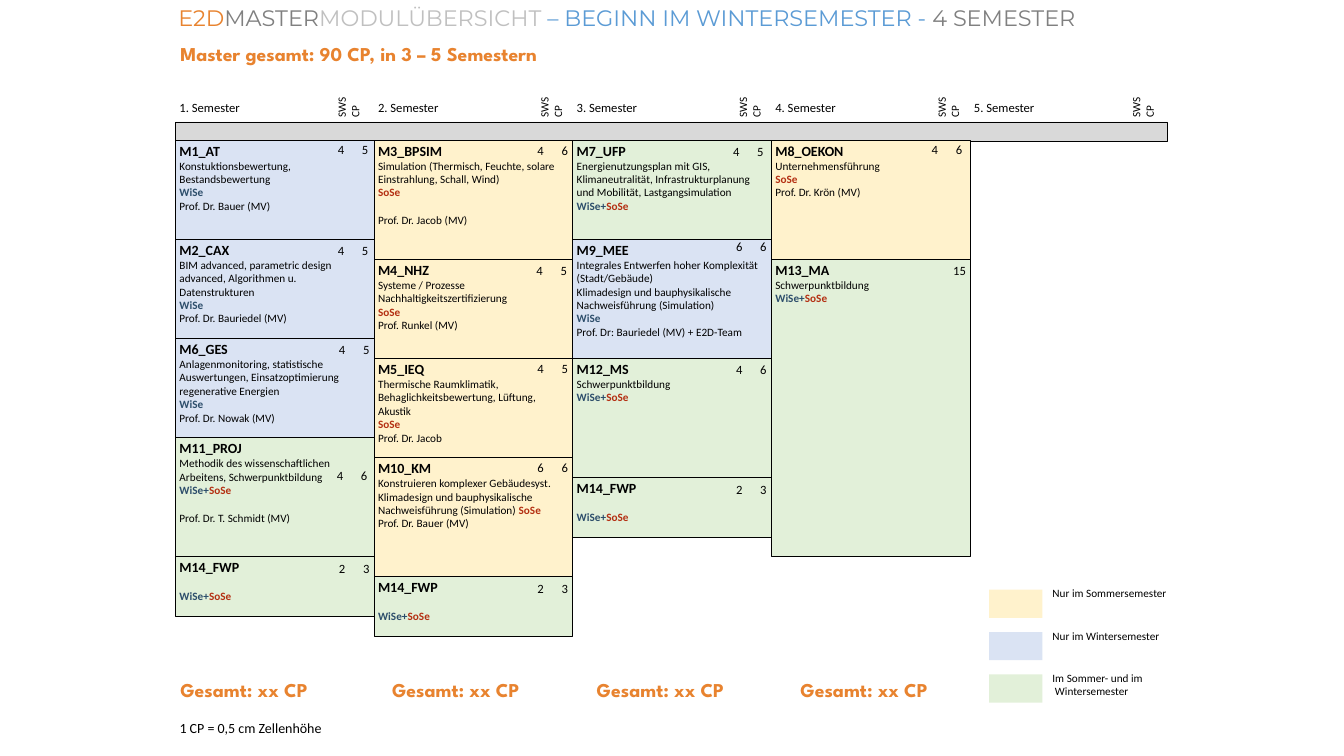
from dataclasses import dataclass

from lxml import etree
from pptx import Presentation
from pptx.dml.color import RGBColor
from pptx.enum.shapes import MSO_SHAPE
from pptx.enum.text import MSO_ANCHOR, MSO_AUTO_SIZE, PP_ALIGN
from pptx.oxml.ns import qn
from pptx.util import Inches, Pt

RECTANGLE = MSO_SHAPE.RECTANGLE
TOP = MSO_ANCHOR.TOP
LEFT, RIGHT = PP_ALIGN.LEFT, PP_ALIGN.RIGHT
NO_AUTOFIT = MSO_AUTO_SIZE.NONE


@dataclass(frozen=True)
class Theme:
    black: str = "000000"
    orange: str = "E8832F"
    grey: str = "808080"
    silver: str = "C0C0C0"
    sky: str = "5B9BD5"
    bar: str = "D9D9D9"
    winter: str = "2D4E6B"
    summer: str = "B43013"
    body_font: str = "Calibri"
    title_font: str = "Montserrat"
    total_font: str = "League Spartan"
    title: int = 16
    total: int = 14
    code: int = 10
    header: int = 9
    small: int = 8


@dataclass(frozen=True)
class Module:
    code: str
    sws: str
    cp: int
    season: str
    body: str = ""
    teacher: str = ""
    teacher_gap: int = 0
    credit_shift: tuple = (0, 0.01)


THEME = Theme()
SEASON_FILLS = {"summer": "FFF2CC", "winter": "DAE3F3", "both": "E2F0D9"}
SEASON_RUNS = {
    "summer": [("SoSe", THEME.summer)],
    "winter": [("WiSe", THEME.winter)],
    "both": [("WiSe+", THEME.winter), ("SoSe", THEME.summer)],
}
ELECTIVE = Module("M14_FWP", "2", 3, "both", credit_shift=(0, 0.02))
SEMESTERS = [
    [
        Module("M1_AT", "4", 5, "winter", "Konstuktionsbewertung,\nBestandsbewertung",
               "Prof. Dr. Bauer (MV)", credit_shift=(-0.01, 0)),
        Module("M2_CAX", "4", 5, "winter",
               "BIM advanced, parametric design advanced, Algorithmen u. Datenstrukturen",
               "Prof. Dr. Bauriedel (MV)", credit_shift=(-0.01, 0.02)),
        Module("M6_GES", "4", 5, "winter",
               "Anlagenmonitoring, statistische Auswertungen, Einsatzoptimierung regenerative Energien",
               "Prof. Dr. Nowak (MV)"),
        Module("M11_PROJ", "4", 6, "both",
               "Methodik des wissenschaftlichen Arbeitens, Schwerpunktbildung",
               "Prof. Dr. T. Schmidt (MV)", 10, (-0.02, 0.28)),
        ELECTIVE,
    ],
    [
        Module("M3_BPSIM", "4", 6, "summer",
               "Simulation (Thermisch, Feuchte, solare Einstrahlung, Schall, Wind)",
               "Prof. Dr. Jacob (MV)", 10),
        Module("M4_NHZ", "4", 5, "summer",
               "Systeme / Prozesse\nNachhaltigkeitszertifizierung",
               "Prof. Runkel (MV)", credit_shift=(-0.01, 0.02)),
        Module("M5_IEQ", "4", 5, "summer",
               "Thermische Raumklimatik, Behaglichkeitsbewertung, Lüftung, Akustik",
               "Prof. Dr. Jacob", credit_shift=(0, 0)),
        Module("M10_KM", "6", 6, "summer",
               "Konstruieren komplexer Gebäudesyst.\nKlimadesign und bauphysikalische\n"
               "Nachweisführung (Simulation) ", "Prof. Dr. Bauer (MV)", credit_shift=(0, 0)),
        ELECTIVE,
    ],
    [
        Module("M7_UFP", "4", 5, "both",
               "Energienutzungsplan mit GIS,\nKlimaneutralität, Infrastrukturplanung "
               "und Mobilität, Lastgangsimulation", credit_shift=(-0.03, 0.02)),
        Module("M9_MEE", "6", 6, "winter",
               "Integrales Entwerfen hoher Komplexität (Stadt/Gebäude)\n"
               "Klimadesign und bauphysikalische Nachweisführung (Simulation)",
               "Prof. Dr: Bauriedel (MV) + E2D-Team", credit_shift=(0, -0.02)),
        Module("M12_MS", "4", 6, "both", "Schwerpunktbildung"),
        ELECTIVE,
    ],
    [
        Module("M8_OEKON", "4", 6, "summer", "Unternehmensführung",
               "Prof. Dr. Krön (MV)", credit_shift=(-0.03, 0)),
        Module("M13_MA", "", 15, "both", "Schwerpunktbildung", credit_shift=(0, 0.02)),
    ],
    [],
]
GRID_LEFT, GRID_TOP, COLUMN_WIDTH = 1.74, 1.39, 1.97
CP_HEIGHT = 0.5 / 2.54
CREDIT_WIDTH = 0.39
UNIT_LEFTS = [3.35, 5.36, 7.33, 9.3, 11.23]
TOTAL_LEFTS = [1.69, 3.79, 5.82, 7.84]


def add_run(paragraph, text, size, color=THEME.black, font=THEME.body_font, bold=False):
    run = paragraph.add_run()
    run.text = text
    run.font.size = Pt(size)
    run.font.name = font
    run.font.bold = bold
    run.font.color.rgb = RGBColor.from_string(color)


def add_box(left, top, width, height, inset=(0.04, 0.04), fill=None, outlined=False):
    """Add a text box, or a rectangle if a fill is given."""
    area = Inches(left), Inches(top), Inches(width), Inches(height)
    if fill:
        box = slide.shapes.add_shape(RECTANGLE, *area)
        box.shadow.inherit = False
        box.fill.solid()
        box.fill.fore_color.rgb = RGBColor.from_string(fill)
        if outlined:
            box.line.color.rgb = RGBColor.from_string(THEME.black)
            box.line.width = Pt(0.5)
        else:
            box.line.fill.background()
    else:
        box = slide.shapes.add_textbox(*area)
    frame = box.text_frame
    frame.word_wrap = True
    frame.vertical_anchor = TOP
    frame.margin_left = frame.margin_right = Inches(inset[0])
    frame.margin_top = frame.margin_bottom = Inches(inset[1])
    frame.paragraphs[0].alignment = LEFT
    return box


prs = Presentation()
prs.slide_width, prs.slide_height = Inches(13.33), Inches(7.5)
slide = prs.slides.add_slide(prs.slide_layouts[5])

title = slide.shapes.title
title.left, title.top, title.width, title.height = Inches(1.73), 0, Inches(10.02), Inches(0.59)
heading = title.text_frame
heading.auto_size = NO_AUTOFIT
heading.vertical_anchor = TOP
heading.margin_left = heading.margin_right = heading.margin_top = heading.margin_bottom = Inches(0.04)
heading.paragraphs[0].alignment = LEFT
for text, color in [("E2D", THEME.orange), ("MASTER", THEME.grey),
                    ("MODULÜBERSICHT ", THEME.silver),
                    ("– BEGINN IM WINTERSEMESTER - ", THEME.sky), ("4 SEMESTER", THEME.grey)]:
    add_run(heading.paragraphs[0], text, THEME.title, color, THEME.title_font)

sums = [("Master gesamt: 90 CP, in 3 – 5 Semestern", 1.69, 0.37, 4.28)]
sums += [("Gesamt: xx CP", left, 6.68, 1.97) for left in TOTAL_LEFTS]
for text, left, top, width in sums:
    total = add_box(left, top, width, 0.34, (0.1, 0.05))
    add_run(total.text_frame.paragraphs[0], text, THEME.total, THEME.orange, THEME.total_font, True)

add_box(GRID_LEFT, 1.21, 9.84, 0.19, fill=THEME.bar, outlined=True)
for index, (modules, unit_left) in enumerate(zip(SEMESTERS, UNIT_LEFTS)):
    left, top = GRID_LEFT + index * COLUMN_WIDTH, GRID_TOP
    semester = add_box(left, 0.95, 0.97, 0.26)
    add_run(semester.text_frame.paragraphs[0], f"{index + 1}. Semester", THEME.header)
    units = add_box(unit_left, 0.81, 0.33, 0.47)
    units.rotation = 270
    add_run(units.text_frame.paragraphs[0], "SWS", THEME.small)
    add_run(units.text_frame.add_paragraph(), "CP", THEME.small)

    for module in modules:
        height = module.cp * CP_HEIGHT
        cell = add_box(left, top, COLUMN_WIDTH, height, (0.04, 0.02),
                       SEASON_FILLS[module.season], True).text_frame
        add_run(cell.paragraphs[0], module.code, THEME.code, bold=True)
        for line in module.body.splitlines():
            paragraph = cell.add_paragraph()
            paragraph.alignment = LEFT
            add_run(paragraph, line, THEME.small)
        # A body that ends in a space carries the season on its last line.
        if not module.body.endswith(" "):
            paragraph = cell.add_paragraph()
            paragraph.alignment = LEFT
            paragraph.space_before = Pt(0 if module.body else 10)
        for text, color in SEASON_RUNS[module.season]:
            add_run(paragraph, text, THEME.small, color, bold=True)
        if module.teacher:
            teacher = cell.add_paragraph()
            teacher.alignment = LEFT
            teacher.space_before = Pt(module.teacher_gap)
            add_run(teacher, module.teacher, THEME.small)

        shift_x, shift_y = module.credit_shift
        credit = add_box(left + COLUMN_WIDTH - CREDIT_WIDTH + shift_x, top + shift_y,
                         CREDIT_WIDTH, 0.21, (0.04, 0.02)).text_frame.paragraphs[0]
        if module.sws:
            tabs = etree.SubElement(credit._p.get_or_add_pPr(), qn("a:tabLst"))
            etree.SubElement(tabs, qn("a:tab"), pos=str(Inches(0.24)), algn="l")
            add_run(credit, f"{module.sws}\t{module.cp}", THEME.header)
        else:
            credit.alignment = RIGHT
            add_run(credit, str(module.cp), THEME.header)
        top += height

legend = [("summer", ["Nur im Sommersemester"]), ("winter", ["Nur im Wintersemester"]),
          ("both", ["Im Sommer- und im", " Wintersemester"])]
for index, (season, lines) in enumerate(legend):
    top = 5.85 + index * 0.42
    add_box(9.81, top, 0.53, 0.28, fill=SEASON_FILLS[season])
    label = add_box(10.34, top - 0.08, 1.5, 0.24, (0.1, 0.05)).text_frame
    add_run(label.paragraphs[0], lines[0], THEME.small)
    for line in lines[1:]:
        add_run(label.add_paragraph(), line, THEME.small)

scale = add_box(1.74, 7.1, 1.68, 0.32)
add_run(scale.text_frame.paragraphs[0], "1 CP = 0,5 cm Zellenhöhe", THEME.code)

prs.save("out.pptx")
